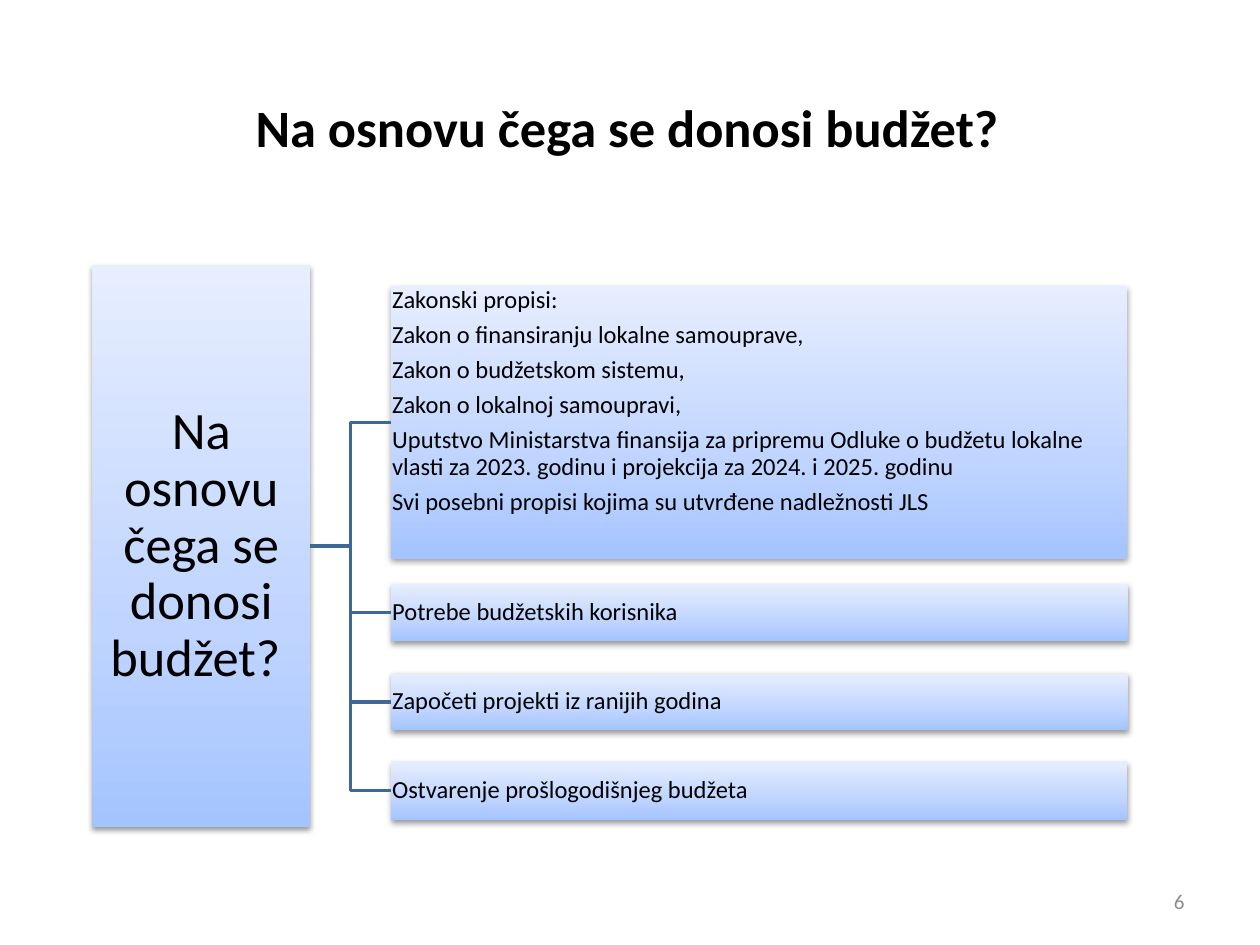
from copy import deepcopy

from lxml import etree
from pptx import Presentation
from pptx.dml.color import RGBColor
from pptx.enum.shapes import MSO_CONNECTOR, MSO_SHAPE
from pptx.enum.text import MSO_ANCHOR, PP_ALIGN
from pptx.oxml.ns import qn
from pptx.util import Pt

ELBOW, RECTANGLE = MSO_CONNECTOR.ELBOW, MSO_SHAPE.RECTANGLE
TOP, MIDDLE = MSO_ANCHOR.TOP, MSO_ANCHOR.MIDDLE
LEFT, CENTER, RIGHT = PP_ALIGN.LEFT, PP_ALIGN.CENTER, PP_ALIGN.RIGHT
GRADIENT = [(0, "A4C4FF"), (0.35, "BFD4FF"), (1, "E6EEFF")]


def rgb(color):
    return RGBColor.from_string(color)


def write(shape, lines, size, align, anchor, inset, color="000000", bold=False, spacing=0.9):
    """Fill a shape with one paragraph per line and format them alike."""
    frame = shape.text_frame
    frame_format = {"word_wrap": True, "vertical_anchor": anchor}
    for side in ("left", "top", "right", "bottom"):
        frame_format[f"margin_{side}"] = Pt(inset)
    for name, value in frame_format.items():
        setattr(frame, name, value)
    frame.text = "\n".join(lines)
    paragraph_format = {"alignment": align, "line_spacing": spacing, "space_after": Pt(0.35 * size)}
    font_format = {"name": "Calibri", "size": Pt(size), "bold": bold}
    for paragraph in frame.paragraphs:
        for name, value in paragraph_format.items():
            setattr(paragraph, name, value)
        font = paragraph.runs[0].font
        for name, value in font_format.items():
            setattr(font, name, value)
        font.color.rgb = rgb(color)


prs = Presentation()
prs.slide_width, prs.slide_height = Pt(720), Pt(540)
slide = prs.slides.add_slide(prs.slide_layouts[5])

# Title and page number
title = slide.shapes.title
title.left, title.top, title.width, title.height = Pt(34.5), Pt(39), Pt(648), Pt(67)
write(title, ["Na osnovu čega se donosi budžet?"], 30, CENTER, MIDDLE, 3.6, bold=True, spacing=1)
page_number = slide.shapes.add_textbox(Pt(516), Pt(500.5), Pt(168), Pt(28.75))
write(page_number, ["6"], 12, RIGHT, MIDDLE, 7.2, color="8C8C8C", spacing=1)

# The question first, then the four bases of the budget:
# left, top, width, height, lines, size, alignment, anchor, inset
boxes = [
    (52.8, 151.6, 124.5, 321, ["Na osnovu čega se donosi budžet? "], 30, CENTER, MIDDLE, 1.5),
    (223.4, 163.6, 420.6, 155.6, [
        "Zakonski propisi:",
        "Zakon o finansiranju lokalne samouprave,",
        "Zakon o budžetskom sistemu,",
        "Zakon o lokalnoj samoupravi,",
        "Uputstvo Ministarstva finansija za pripremu Odluke o budžetu lokalne "
        "vlasti za 2023. godinu i projekcija za 2024. i 2025. godinu",
        "Svi posebni propisi kojima su utvrđene nadležnosti JLS",
    ], 14, LEFT, TOP, 0.7),
    (223.4, 333.8, 421, 32.4, ["Potrebe budžetskih korisnika"], 14, LEFT, MIDDLE, 0.7),
    (223.4, 384.9, 421, 32.4, ["Započeti projekti iz ranijih godina"], 14, LEFT, MIDDLE, 0.7),
    (223.4, 435, 420.6, 33.6, ["Ostvarenje prošlogodišnjeg budžeta"], 14, LEFT, MIDDLE, 0.7),
]
drawn = []
for left, top, width, height, lines, size, align, anchor, inset in boxes:
    box = slide.shapes.add_shape(RECTANGLE, Pt(left), Pt(top), Pt(width), Pt(height))
    box.fill.gradient()
    box.fill.gradient_angle = 90
    stops = box._element.spPr.find(".//" + qn("a:gsLst"))
    stops.append(deepcopy(stops[0]))
    for stop, (position, color) in zip(box.fill.gradient_stops, GRADIENT):
        stop.position = position
        stop.color.rgb = rgb(color)
    box.line.fill.background()
    box.shadow.inherit = False
    effects = box._element.spPr.find(qn("a:effectLst"))
    shadow = etree.SubElement(effects, qn("a:outerShdw"), blurRad="40000", dist="20000",
                              dir="5400000", rotWithShape="0")
    shadow_color = etree.SubElement(shadow, qn("a:srgbClr"), val="000000")
    etree.SubElement(shadow_color, qn("a:alpha"), val="38000")
    write(box, lines, size, align, anchor, inset)
    drawn.append(box)

# Branches from the question to each basis
question, *bases = drawn
for basis in bases:
    branch = slide.shapes.add_connector(ELBOW, 0, 0, 0, 0)
    branch.begin_connect(question, 3)
    branch.end_connect(basis, 1)
    branch.line.color.rgb = rgb("3F6797")
    branch.line.width = Pt(2)
    etree.SubElement(branch._element.spPr, qn("a:effectLst"))

prs.save("out.pptx")
